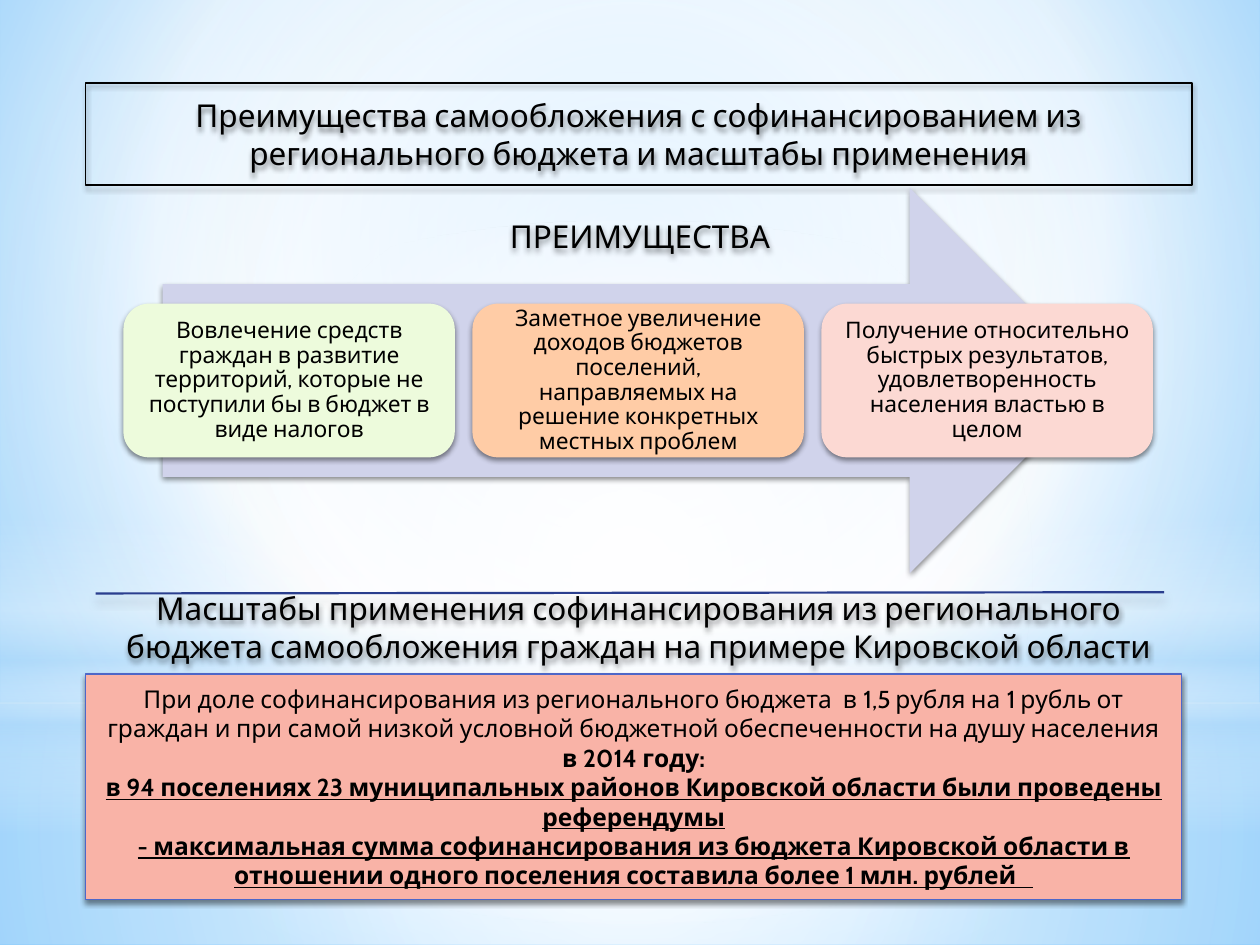
"""Build a slide on the benefits and scale of co-financed self-taxation."""
from pptx import Presentation
from pptx.dml.color import RGBColor
from pptx.enum.shapes import MSO_CONNECTOR, MSO_SHAPE
from pptx.enum.text import MSO_ANCHOR, PP_ALIGN
from pptx.oxml import parse_xml
from pptx.oxml.ns import nsdecls, qn
from pptx.util import Inches, Pt

hue = RGBColor.from_string
deck = Presentation()
deck.slide_width, deck.slide_height = Inches(10), Inches(7.5)
col, row = deck.slide_width / 100, deck.slide_height / 75
slide = deck.slides.add_slide(deck.slide_layouts[6])
shapes = slide.shapes


def grad(props, stops, focus):
    """Swap a solid fill for a gradient, radial when a focus is given."""
    marks = "".join(
        f'<a:gs pos="{pos * 1000}"><a:srgbClr val="{tint}">'
        f'<a:alpha val="{alpha * 1000}"/></a:srgbClr></a:gs>'
        for pos, tint, alpha in stops)
    way = '<a:lin ang="5400000" scaled="0"/>'
    if focus:
        sides = " ".join(f'{side}="{share * 1000}"' for side, share in zip("ltrb", focus))
        way = f'<a:path path="circle"><a:fillToRect {sides}/></a:path>'
    props.replace(props.find(qn("a:solidFill")), parse_xml(
        f'<a:gradFill {nsdecls("a")} rotWithShape="1"><a:gsLst>{marks}</a:gsLst>{way}</a:gradFill>'))


def shade(props, alpha, blur, gap):
    """Give a shape a soft shadow that falls straight down."""
    props.append(parse_xml(
        f'<a:effectLst {nsdecls("a")}><a:outerShdw blurRad="{Pt(blur)}" dist="{Pt(gap)}" '
        f'dir="5400000" algn="ctr" rotWithShape="0"><a:srgbClr val="000000">'
        f'<a:alpha val="{alpha * 1000}"/></a:srgbClr></a:outerShdw></a:effectLst>'))


slide.background.fill.solid()
grad(slide.background._cSld.bg.bgPr,
     [(0, "9ED5FF", 100), (60, "FFFFFF", 100), (100, "5BB9FF", 100)], (20, 10, 20, 60))

mid = (50, 50, 50, 50)
glows = [
    (MSO_SHAPE.RECTANGLE, 55.8, 19.2, mid,
     [(0, "FFFFFF", 91), (37, "FFFFFF", 76), (100, "B4DCFA", 79)]),
    (MSO_SHAPE.RECTANGLE, 0, 55.8, mid,
     [(0, "FFFFFF", 89), (48, "FFFFFF", 62), (100, "B4DCFA", 79)]),
    (MSO_SHAPE.RECTANGLE, 41.2, 25, None,
     [(0, "FFFFFF", 0), (29, "FFFFFF", 30), (45, "B4DCFA", 40),
      (55, "FFFFFF", 26), (65, "B4DCFA", 60), (100, "FFFFFF", 0)]),
    (MSO_SHAPE.OVAL, 17.5, 55.8, mid, [(0, "FFFFFF", 100), (56, "FFFFFF", 0)]),
]
for kind, top, high, focus, stops in glows:
    glow = shapes.add_shape(kind, 0, int(top * row), deck.slide_width, int(high * row))
    glow.shadow.inherit = False
    glow.line.fill.background()
    glow.fill.solid()
    grad(glow._element.spPr, stops, focus)

cards = [
    ("EDFBDC", "Вовлечение средств граждан в развитие территорий, которые не "
               "поступили бы в бюджет в виде налогов"),
    ("FFCCA6", "Заметное увеличение доходов бюджетов поселений, направляемых "
               "на решение конкретных местных проблем"),
    ("FCD9D3", "Получение относительно быстрых результатов, удовлетворенность "
               "населения властью в целом"),
]
note = [
    "При доле софинансирования из регионального бюджета  в 1,5 рубля на 1 рубль от граждан "
    "и при самой низкой условной бюджетной обеспеченности на душу населения",
    "в 2014 году:",
    "в 94 поселениях 23 муниципальных районов Кировской области были проведены референдумы",
    "- максимальная сумма софинансирования из бюджета Кировской области в отношении "
    "одного поселения составила более 1 млн. рублей   ",
]
rect, card = MSO_SHAPE.RECTANGLE, MSO_SHAPE.ROUNDED_RECTANGLE
parts = [
    (rect, (6.8, 6.6, 87.8, 8.1), None, "000000", 18,
     ["Преимущества самообложения с софинансированием из регионального бюджета "
      "и масштабы применения"]),
    (None, (31.4, 16.2, 38.8, 5.1), None, None, 18, ["ПРЕИМУЩЕСТВА"]),
    (MSO_SHAPE.RIGHT_ARROW, (12.9, 14.9, 74.6, 30.6), "D0D3EB", None, 18, []),
    *[(card, (9.8 + 27.7 * i, 24.1, 26.3, 12.2), tint, None, 13, [text])
      for i, (tint, text) in enumerate(cards)],
    (None, (6.8, 47.2, 87.8, 5.1), None, None, 18,
     ["Масштабы применения софинансирования из регионального бюджета "
      "самообложения граждан на примере Кировской области"]),
    (rect, (6.8, 53.5, 87, 17.9), "F9B3A7", "4E67C8", 14, note),
]
for kind, (left, top, wide, high), tint, edge, size, lines in parts:
    place = int(left * col), int(top * row), int(wide * col), int(high * row)
    part = shapes.add_shape(kind, *place) if kind else shapes.add_textbox(*place)
    if tint:
        part.fill.solid()
        part.fill.fore_color.rgb = hue(tint)
    else:
        part.fill.background()
    if edge:
        part.line.color.rgb = hue(edge)
        part.line.width = Pt(0.75)
    else:
        part.line.fill.background()
    shade(part._element.spPr, 45, 3.1, 1.8)
    if not lines:
        continue
    frame = part.text_frame
    frame.text = "\n".join(lines)
    frame.word_wrap = True
    frame.vertical_anchor = MSO_ANCHOR.MIDDLE
    if kind == card:
        frame.margin_left = frame.margin_right = int(1.1 * col)
        frame.margin_top = frame.margin_bottom = int(1.1 * row)
    for i, para in enumerate(frame.paragraphs):
        para.alignment = PP_ALIGN.CENTER
        if kind == card:
            para.line_spacing = 0.9
        font = para.runs[0].font
        font.name, font.size = "Cabin", Pt(size)
        font.color.rgb = hue("000000")
        font.bold, font.underline = i > 0, i > 1

rule = shapes.add_connector(MSO_CONNECTOR.STRAIGHT, int(7.6 * col), int(47.1 * row),
                            int(92.4 * col), int(47 * row))
rule.line.color.rgb = hue("2A3E8E")
rule.line.width = Pt(1.25)
shade(rule._element.spPr, 20, 5, 4)

deck.save("out.pptx")
